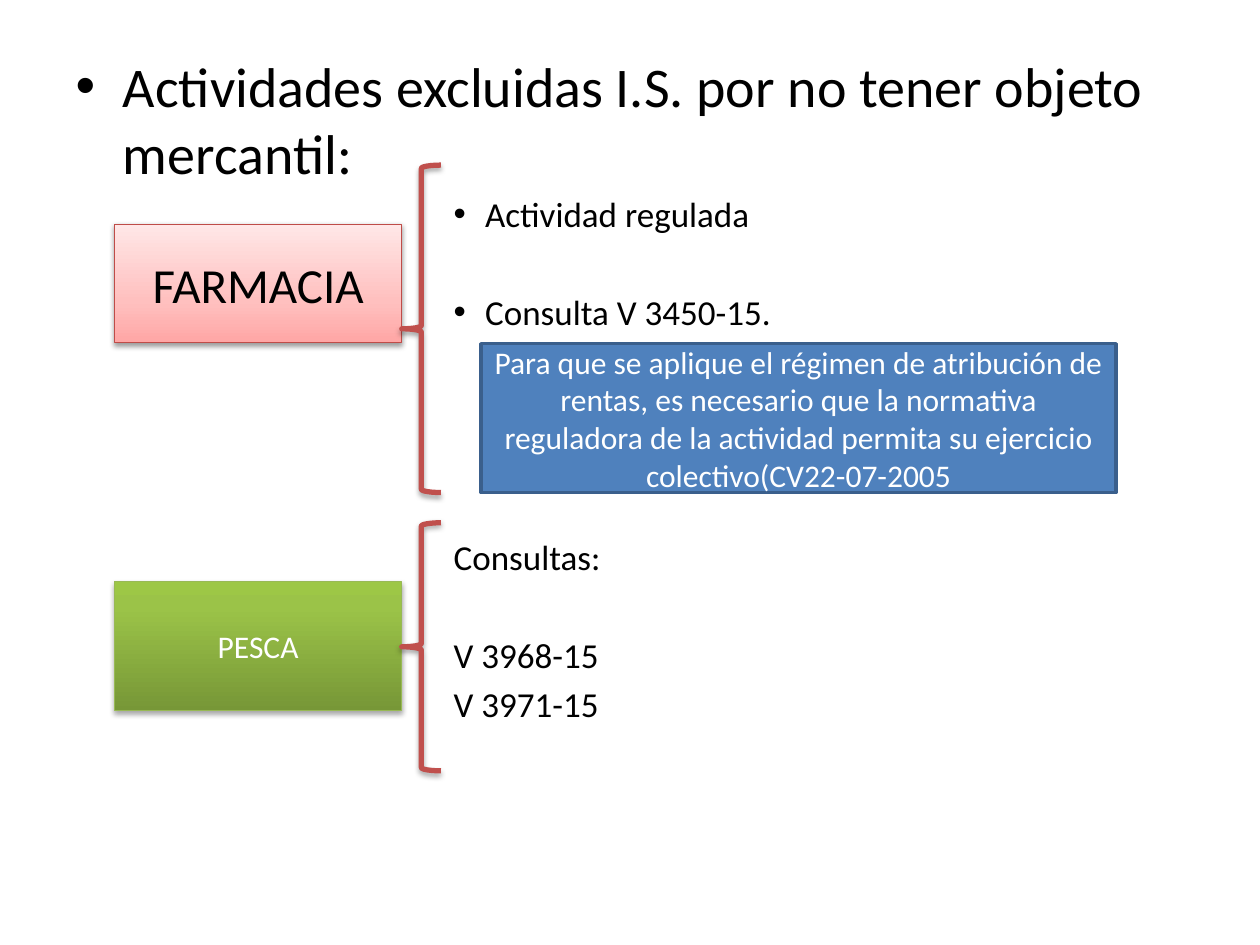
from copy import deepcopy

from lxml.etree import SubElement
from pptx import Presentation
from pptx.dml.color import RGBColor
from pptx.enum.shapes import MSO_SHAPE as Preset
from pptx.enum.text import MSO_ANCHOR as Anchor, PP_ALIGN as Align
from pptx.oxml.ns import qn
from pptx.util import Cm, Pt

COLORS = {
    "text": "000000",
    "light": "FFFFFF",
    "brace": "C0504D",
    "pharmacy_line": "BF4C48",
    "fishing_line": "98B955",
    "note": "4F81BD",
    "note_line": "3A5F8C",
}
PHARMACY_STOPS = [(0, "FFA6A5"), (0.35, "FFC0BF"), (1, "FFE7E7")]
FISHING_STOPS = [(0, "779737"), (0.8, "9BC348"), (1, "9DC746")]

HEADING = "Actividades excluidas I.S. por no tener objeto mercantil:"
ITEMS = [
    ("Actividad regulada", True, 0),
    ("Consulta V 3450-15.", True, 1),
    ("Consultas:", False, 4),
    ("V 3968-15", False, 1),
    ("V 3971-15", False, 0),
]
NOTE = (
    "Para que se aplique el régimen de atribución de rentas, es necesario que "
    "la normativa reguladora de la actividad permita su ejercicio "
    "colectivo(CV22-07-2005"
)
BODY_BOX = (1.27, 0.91, 22.86, 16.1)
NOTE_BOX = (9.7, 6.93, 12.8, 3)
BOX_LEFT, BOX_WIDTH, BRACE_WIDTH = 2.31, 5.79, 0.79
GROUPS = [
    {"label": "FARMACIA", "size": 28, "color": "text", "line": "pharmacy_line",
     "stops": PHARMACY_STOPS, "box": (4.52, 2.39), "brace": (3.33, 6.6),
     "shadow": (38, 1.6)},
    {"label": "PESCA", "size": 18, "color": "light", "line": "fishing_line",
     "stops": FISHING_STOPS, "box": (11.73, 2.59), "brace": (10.54, 5),
     "shadow": (35, 1.8)},
]
LINE_PITCH, ITEM_SPACE = 28, 4


def rgb(name):
    return RGBColor.from_string(COLORS[name])


def apply_format(target, values):
    for name, value in values.items():
        setattr(target, name, value)


def write(paragraph, text, size, color):
    run = paragraph.add_run()
    run.text = text
    apply_format(run.font, {"size": Pt(size), "name": "Calibri"})
    run.font.color.rgb = rgb(color)


def add_shape(slide, preset, box, line, width):
    shape = slide.shapes.add_shape(preset, *map(Cm, box))
    shape.shadow.inherit = False
    shape.line.color.rgb = rgb(line)
    shape.line.width = Pt(width)
    return shape


def add_label(shape, text, size, color):
    frame = shape.text_frame
    apply_format(frame, {"word_wrap": True, "vertical_anchor": Anchor.MIDDLE})
    frame.paragraphs[0].alignment = Align.CENTER
    write(frame.paragraphs[0], text, size, color)


def add_shadow(shape, opacity, distance):
    effects = shape._element.spPr.find(qn("a:effectLst"))
    shadow = SubElement(effects, qn("a:outerShdw"), blurRad=str(Pt(3.1)),
                        dist=str(Pt(distance)), dir="5400000", rotWithShape="0")
    color = SubElement(shadow, qn("a:srgbClr"), val=COLORS["text"])
    SubElement(color, qn("a:alpha"), val=str(opacity * 1000))


def fill_gradient(shape, stops):
    shape.fill.gradient()
    shape.fill.gradient_angle = 90
    stop_list = shape._element.spPr.find(".//" + qn("a:gsLst"))
    stop_list.insert(1, deepcopy(stop_list[0]))
    for stop, (position, color) in zip(shape.fill.gradient_stops, stops):
        stop.position = position
        stop.color.rgb = RGBColor.from_string(color)


def fill_body(body):
    apply_format(body, dict(zip(("left", "top", "width", "height"), map(Cm, BODY_BOX))))
    frame = body.text_frame
    write(frame.paragraphs[0], HEADING, 32, "text")
    for text, bulleted, skipped_lines in ITEMS:
        paragraph = frame.add_paragraph()
        apply_format(paragraph, {
            "level": 6,
            "space_before": Pt(ITEM_SPACE + skipped_lines * LINE_PITCH),
        })
        if not bulleted:
            properties = paragraph._p.get_or_add_pPr()
            properties.set("marL", str(Cm(7.62)))
            properties.set("indent", "0")
            SubElement(properties, qn("a:buNone"))
        write(paragraph, text, 20, "text")


def add_group(slide, group):
    top, height = group["box"]
    box = add_shape(slide, Preset.RECTANGLE, (BOX_LEFT, top, BOX_WIDTH, height),
                    group["line"], 0.75)
    fill_gradient(box, group["stops"])
    add_shadow(box, *group["shadow"])
    add_label(box, group["label"], group["size"], group["color"])

    top, height = group["brace"]
    brace = add_shape(slide, Preset.LEFT_BRACE,
                      (BOX_LEFT + BOX_WIDTH, top, BRACE_WIDTH, height), "brace", 3)
    brace.fill.background()
    add_shadow(brace, 35, 1.8)


def main():
    presentation = Presentation()
    apply_format(presentation, {"slide_width": Cm(25.4), "slide_height": Cm(19.05)})
    slide = presentation.slides.add_slide(presentation.slide_layouts[1])
    title = slide.shapes.title._element
    title.getparent().remove(title)
    fill_body(slide.placeholders[1])
    for group in GROUPS:
        add_group(slide, group)
    note = add_shape(slide, Preset.RECTANGLE, NOTE_BOX, "note_line", 2)
    note.fill.solid()
    note.fill.fore_color.rgb = rgb("note")
    add_label(note, NOTE, 18, "light")
    presentation.save("out.pptx")


if __name__ == "__main__":
    main()
